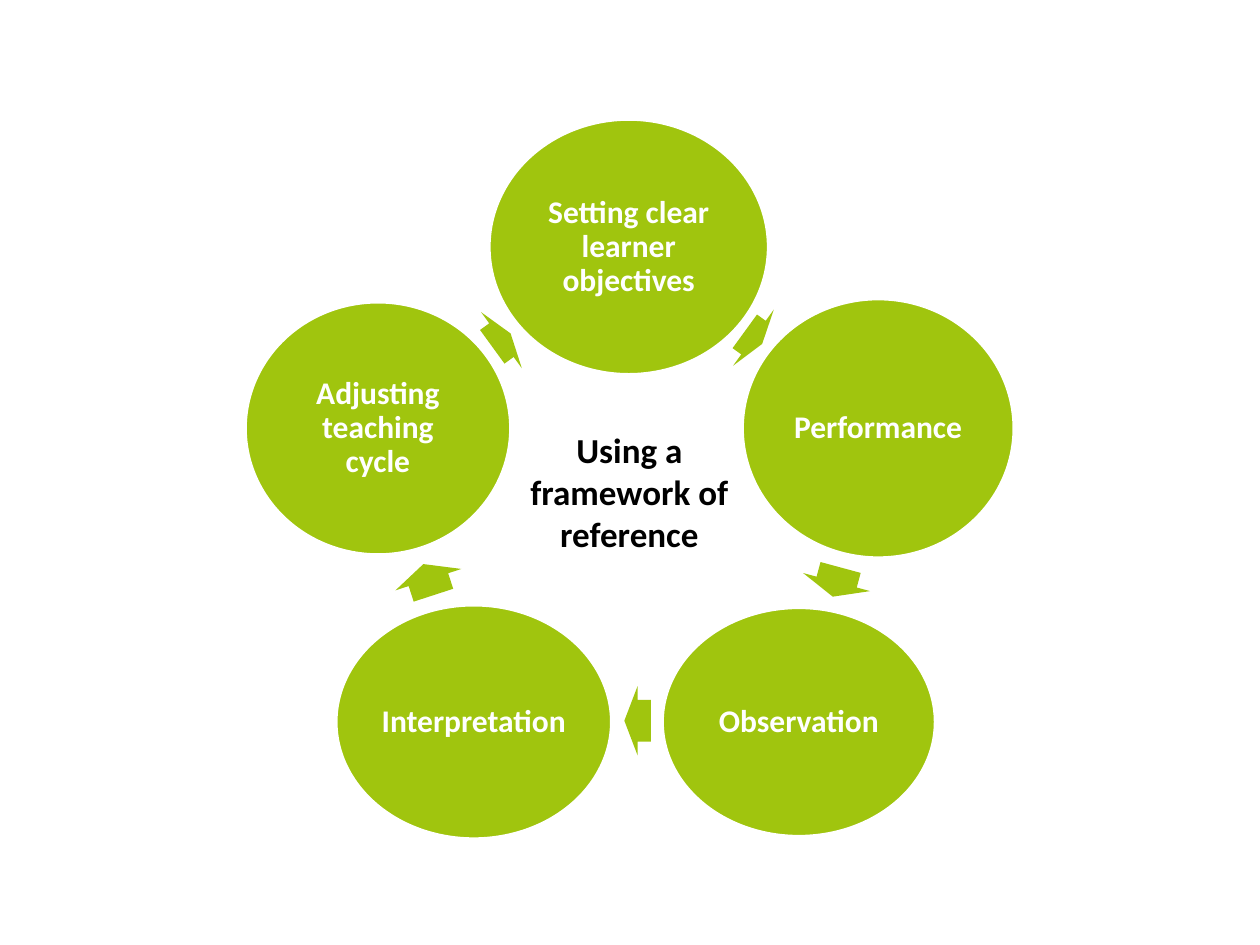
from pptx import Presentation
from pptx.dml.color import RGBColor
from pptx.enum import shapes, text
from pptx.util import Inches, Pt

COLORS = {"green": "A0C50E", "white": "FFFFFF", "black": "000000"}
FONT = "Calibri"

# Stages clockwise from the top: label, centre, size
STAGES = [
    ("Setting clear learner objectives", (4.99, 1.96), (2.22, 2.03)),
    ("Performance", (6.97, 3.4), (2.16, 2.06)),
    ("Observation", (6.34, 5.73), (2.17, 1.82)),
    ("Interpretation", (3.76, 5.73), (2.19, 1.86)),
    ("Adjusting teaching cycle", (3.0, 3.4), (2.11, 2.01)),
]
# Arrow after each stage: centre, length, rotation
ARROWS = [
    ((5.98, 2.68), 0.17, 36),
    ((6.64, 4.62), 0.24, 105.1),
    ((5.06, 5.72), 0.21, 180),
    ((3.4, 4.6), 0.26, 252),
    ((3.98, 2.7), 0.18, 324),
]
ARROW_WIDTH = 0.55
CENTRE_TEXT = "Using a framework of reference"


def color(name):
    return RGBColor.from_string(COLORS[name])


def add_centred(slide, kind, centre, size):
    """Add a green shape around its centre point."""
    left, top = (c - s / 2 for c, s in zip(centre, size))
    shape = slide.shapes.add_shape(kind, *map(Inches, (left, top, *size)))
    shape.shadow.inherit = False
    shape.fill.solid()
    shape.fill.fore_color.rgb = color("green")
    shape.line.fill.background()
    return shape


def write(shape, words, size, color_name):
    frame = shape.text_frame
    frame.word_wrap = True
    frame.text = words
    para = frame.paragraphs[0]
    para.alignment = text.PP_ALIGN.CENTER
    font = para.runs[0].font
    font.name, font.size, font.bold = FONT, Pt(size), True
    font.color.rgb = color(color_name)
    return frame


def add_stage(slide, label, centre, size):
    oval = add_centred(slide, shapes.MSO_SHAPE.OVAL, centre, size)
    oval.line.color.rgb = color("white")
    oval.line.width = Pt(2)
    frame = write(oval, label, 18, "white")
    frame.vertical_anchor = text.MSO_ANCHOR.MIDDLE
    frame.margin_left = frame.margin_right = Inches(0.03)
    frame.margin_top = frame.margin_bottom = Inches(0.03)
    frame.paragraphs[0].line_spacing = 0.9


def add_arrow(slide, centre, length, rotation):
    arrow = add_centred(slide, shapes.MSO_SHAPE.RIGHT_ARROW, centre, (length, ARROW_WIDTH))
    arrow.adjustments[0], arrow.adjustments[1] = 0.6, 0.5
    arrow.rotation = rotation


def main():
    deck = Presentation()
    deck.slide_width, deck.slide_height = Inches(10), Inches(7.5)
    slide = deck.slides.add_slide(deck.slide_layouts[6])

    # Cycle of stages and arrows
    for stage, arrow in zip(STAGES, ARROWS):
        add_stage(slide, *stage)
        add_arrow(slide, *arrow)

    # Text in the middle of the cycle
    box = slide.shapes.add_textbox(*map(Inches, (4.09, 3.35, 1.81, 1.11)))
    write(box, CENTRE_TEXT, 20, "black")

    deck.save("out.pptx")


if __name__ == "__main__":
    main()
